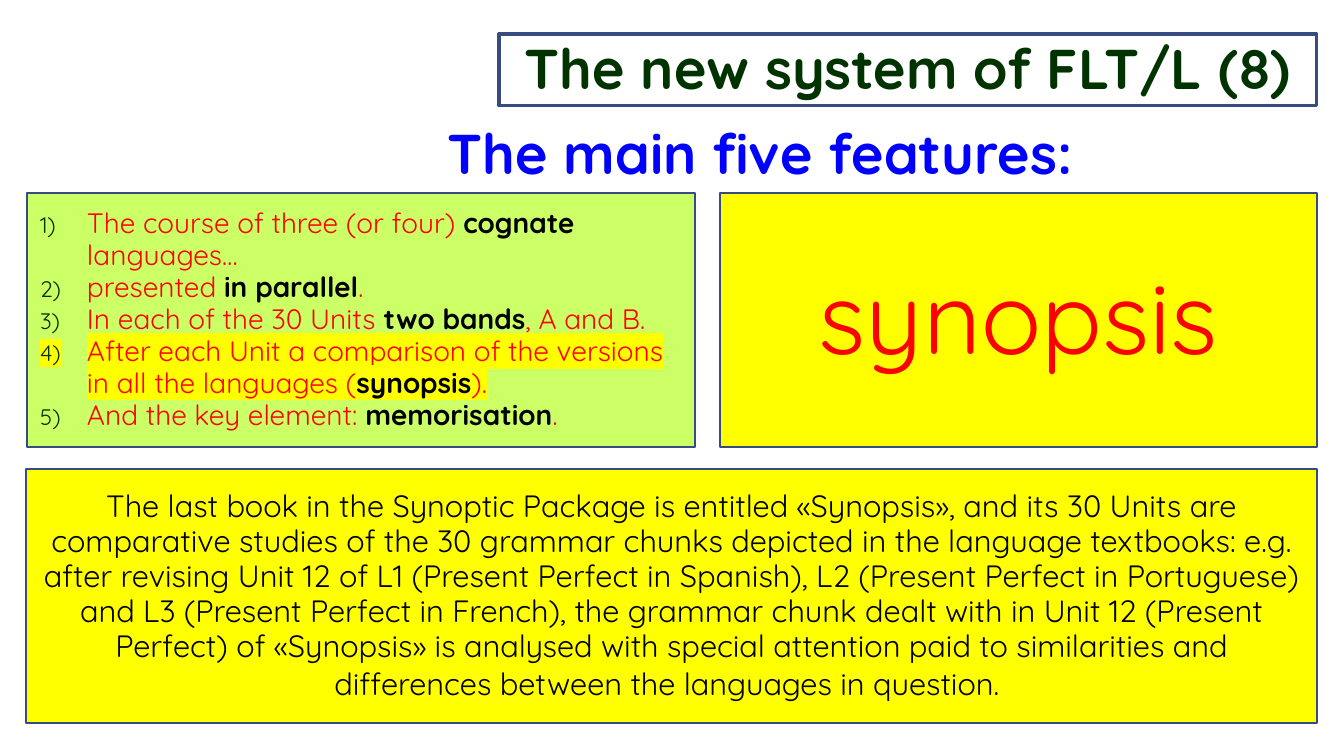
from lxml import etree
from pptx import Presentation
from pptx.dml.color import RGBColor
from pptx.enum.shapes import MSO_SHAPE
from pptx.enum.text import MSO_ANCHOR, PP_ALIGN
from pptx.oxml.ns import qn
from pptx.util import Emu, Pt

EMU_PER_PX = 914400 / 100.8
RECTANGLE = MSO_SHAPE.RECTANGLE
MIDDLE = MSO_ANCHOR.MIDDLE
LEFT, CENTER = PP_ALIGN.LEFT, PP_ALIGN.CENTER
FONT = "Quicksand"
BLACK, RED, BLUE, DARK_GREEN = "000000", "FF0000", "0000FF", "003300"
YELLOW, LIME, NAVY = "FFFF00", "CCFF66", "374C81"
MARGIN_X, MARGIN_Y, LIST_INDENT = 13, 7, 47


def px(length):
    return Emu(round(length * EMU_PER_PX))


def color(hex_string):
    return RGBColor.from_string(hex_string)


presentation = Presentation()
presentation.slide_width, presentation.slide_height = px(1344), px(756)
slide = presentation.slides.add_slide(presentation.slide_layouts[6])

LAST_BOOK = (
    "The last book in the Synoptic Package is entitled «Synopsis», and its 30 Units are "
    "comparative studies of the 30 grammar chunks depicted in the language textbooks: e.g. "
    "after revising Unit 12 of L1 (Present Perfect in Spanish), L2 (Present Perfect in "
    "Portuguese) and L3 (Present Perfect in French), the grammar chunk dealt with in Unit 12 "
    "(Present Perfect) of «Synopsis» is analysed with special attention paid to similarities "
    "and differences between the languages in question."
)

# Each feature: text before, bold key words, text after, highlight
FEATURES = [
    ("The course of three (or four) ", "cognate ", "languages…", None),
    ("presented ", "in parallel", ".", None),
    ("In each of the 30 Units ", "two bands", ", A and B.", None),
    ("After each Unit a comparison of the versions in all the languages (",
     "synopsis", ").", YELLOW),
    ("And the key element: ", "memorisation", ".", None),
]
feature_paragraphs = [
    [(before, 20, RED, False, highlight),
     (key_words, 20, BLACK, True, highlight),
     (after, 20, RED, False, highlight)]
    for before, key_words, after, highlight in FEATURES
]

# Each box: position, fill, line width, alignment, numbered, paragraphs of runs
BOXES = [
    ((435, 108, 881, 95), None, None, LEFT, False,
     [[("The main five features:", 40, BLUE, True, None)]]),
    ((499, 34, 818, 72), None, 2.25, CENTER, False,
     [[("The new system of FLT/L (8)", 40, DARK_GREEN, True, None)]]),
    ((720, 193, 597, 254), YELLOW, 1, CENTER, False,
     [[("synopsis", 72, RED, False, None)]]),
    ((26, 469, 1291, 254), YELLOW, 1, CENTER, False,
     [[(LAST_BOOK, 22, BLACK, False, None), (" ", 24, BLACK, False, None)]]),
    ((27, 193, 668, 254), LIME, 1, LEFT, True, feature_paragraphs),
]

for position, fill, line_width, alignment, numbered, paragraphs in BOXES:
    box = [px(length) for length in position]
    if line_width:
        shape = slide.shapes.add_shape(RECTANGLE, *box)
        shape.shadow.inherit = False
        shape.line.color.rgb = color(NAVY)
        shape.line.width = Pt(line_width)
        if fill:
            shape.fill.solid()
            shape.fill.fore_color.rgb = color(fill)
        else:
            shape.fill.background()
    else:
        shape = slide.shapes.add_textbox(*box)

    frame = shape.text_frame
    frame.word_wrap = True
    frame.vertical_anchor = MIDDLE
    frame.margin_left = frame.margin_right = px(MARGIN_X)
    frame.margin_top = frame.margin_bottom = px(MARGIN_Y)

    for index, runs in enumerate(paragraphs):
        paragraph = frame.add_paragraph() if index else frame.paragraphs[0]
        paragraph.alignment = alignment
        paragraph.line_spacing = 0.95
        if numbered:
            properties = paragraph._p.get_or_add_pPr()
            properties.set("marL", str(px(LIST_INDENT)))
            properties.set("indent", str(-px(LIST_INDENT)))
            bullet_color = etree.SubElement(properties, qn("a:buClr"))
            etree.SubElement(bullet_color, qn("a:srgbClr"), val=DARK_GREEN)
            etree.SubElement(properties, qn("a:buSzPct"), val="80000")
            etree.SubElement(properties, qn("a:buFont"), typeface=FONT)
            etree.SubElement(properties, qn("a:buAutoNum"), type="arabicParenR")

        for text, size, text_color, bold, highlight in runs:
            run = paragraph.add_run()
            run.text = text
            run.font.name = FONT
            run.font.size = Pt(size)
            run.font.bold = bold
            run.font.color.rgb = color(text_color)
            if highlight:
                marker = etree.Element(qn("a:highlight"))
                etree.SubElement(marker, qn("a:srgbClr"), val=highlight)
                run.font._element.find(qn("a:solidFill")).addnext(marker)

presentation.save("out.pptx")
